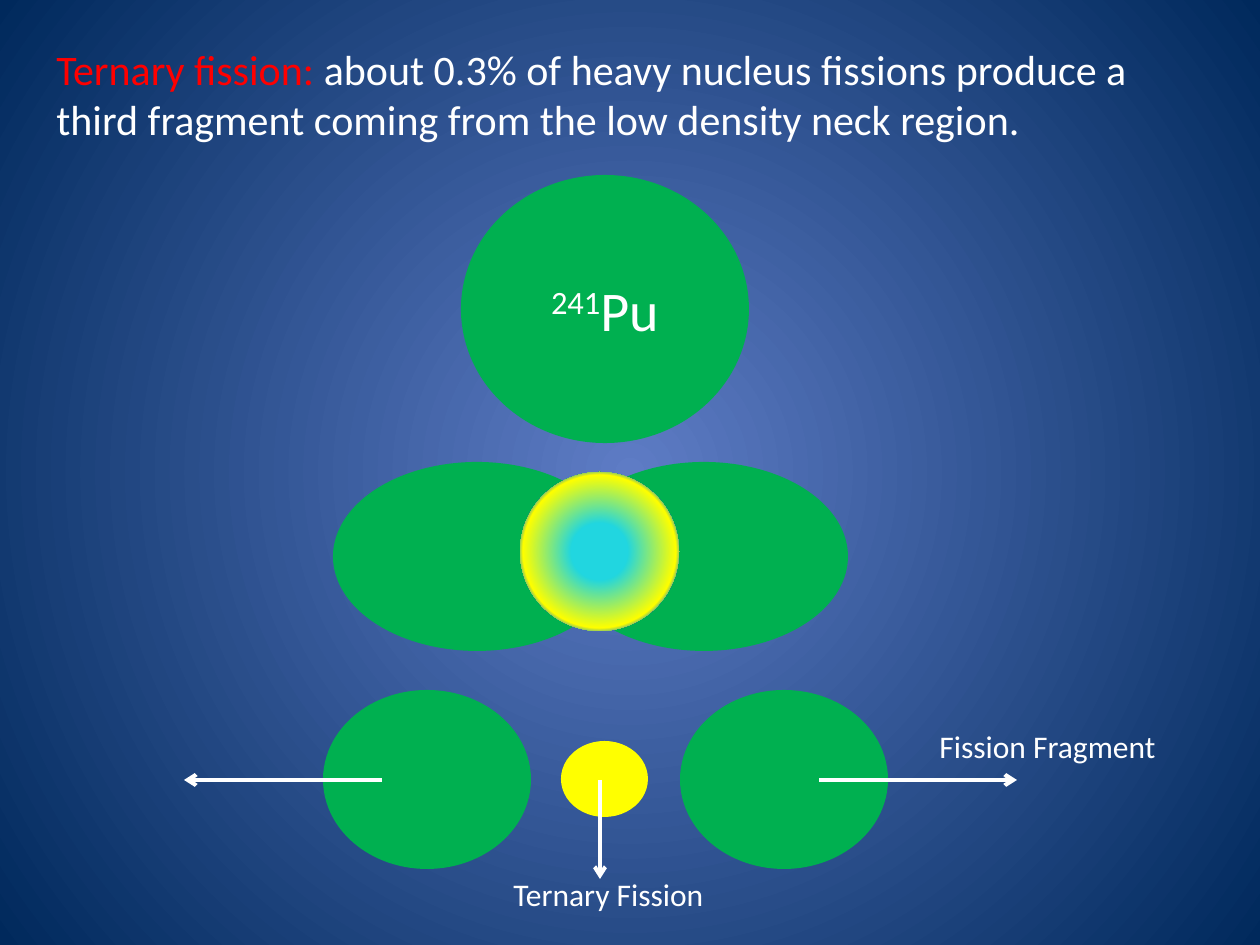
"""Build a slide that explains ternary fission of a heavy nucleus."""
from dataclasses import dataclass
from typing import Any

import lxml.etree
import pptx
import pptx.dml.color
import pptx.enum.shapes
import pptx.enum.text
import pptx.oxml.ns
import pptx.util

SCALE = 914400 / 126
qn = pptx.oxml.ns.qn
Stops = tuple[tuple[int, str], ...]


@dataclass(frozen=True)
class Theme:
    font: str = "Calibri"
    white: str = "FFFFFF"
    accent: str = "FF0000"
    nucleus: str = "00B050"
    ternary: str = "FFFF00"
    background: Stops = ((0, "5E7CC5"), (100, "00295C"))
    neck: Stops = ((25, "21D6E0"), (68, "FFFF00"), (75, "0087E6"), (100, "005CBF"))
    title_size: int = 24
    nucleus_size: int = 32
    label_size: int = 18
    arrow_width: float = 2.25


THEME = Theme()


@dataclass(frozen=True)
class Span:
    text: str
    size: int
    color: str = THEME.white
    raised: bool = False


@dataclass(frozen=True)
class Ellipse:
    left: int
    top: int
    width: int
    height: int
    fill: str | Stops = THEME.nucleus
    spans: tuple[Span, ...] = ()


@dataclass(frozen=True)
class Arrow:
    x: int
    y: int
    dx: int
    dy: int


@dataclass(frozen=True)
class Label:
    left: int
    top: int
    width: int
    height: int
    spans: tuple[Span, ...]
    wrap: bool = False


def px(*lengths: int) -> list[pptx.util.Emu]:
    return [pptx.util.Emu(round(length * SCALE)) for length in lengths]


def rgb(color: str) -> pptx.dml.color.RGBColor:
    return pptx.dml.color.RGBColor.from_string(color)


def apply(target: Any, values: dict[str, Any]) -> None:
    for name, value in values.items():
        setattr(target, name, value)


def fill_radial(owner: Any, fill: Any, stops: Stops) -> None:
    fill.solid()
    solid = owner.element.find(f".//{qn('a:solidFill')}")
    gradient = lxml.etree.Element(qn("a:gradFill"), rotWithShape="1")
    stop_list = lxml.etree.SubElement(gradient, qn("a:gsLst"))
    for position, color in stops:
        stop = lxml.etree.SubElement(stop_list, qn("a:gs"), pos=str(position * 1000))
        lxml.etree.SubElement(stop, qn("a:srgbClr"), val=color)
    circle = lxml.etree.SubElement(gradient, qn("a:path"), path="circle")
    center = dict.fromkeys("ltrb", "50000")
    lxml.etree.SubElement(circle, qn("a:fillToRect"), center)
    solid.getparent().replace(solid, gradient)


def write(para: Any, spans: tuple[Span, ...]) -> None:
    for item in spans:
        span = para.add_run()
        span.text = item.text
        apply(span.font, {"name": THEME.font, "size": pptx.util.Pt(item.size)})
        span.font.color.rgb = rgb(item.color)
        if item.raised:
            span._r.get_or_add_rPr().set("baseline", "30000")


def draw_ellipse(page: Any, item: Ellipse) -> None:
    shape = page.shapes.add_shape(
        pptx.enum.shapes.MSO_SHAPE.OVAL,
        *px(item.left, item.top, item.width, item.height),
    )
    shape.shadow.inherit = False
    shape.line.fill.background()
    if isinstance(item.fill, str):
        shape.fill.solid()
        shape.fill.fore_color.rgb = rgb(item.fill)
    else:
        fill_radial(shape, shape.fill, item.fill)
    shape.text_frame.vertical_anchor = pptx.enum.text.MSO_ANCHOR.MIDDLE
    para = shape.text_frame.paragraphs[0]
    para.alignment = pptx.enum.text.PP_ALIGN.CENTER
    write(para, item.spans)


def draw_arrow(page: Any, item: Arrow) -> None:
    arrow = page.shapes.add_connector(
        pptx.enum.shapes.MSO_CONNECTOR.STRAIGHT,
        *px(item.x, item.y, item.x + item.dx, item.y + item.dy),
    )
    arrow.line.width = pptx.util.Pt(THEME.arrow_width)
    arrow.line.color.rgb = rgb(THEME.white)
    outline = arrow.line._get_or_add_ln()
    lxml.etree.SubElement(outline, qn("a:tailEnd"), type="arrow")
    lxml.etree.SubElement(outline.getparent(), qn("a:effectLst"))


def draw_label(page: Any, item: Label) -> None:
    box = page.shapes.add_textbox(*px(item.left, item.top, item.width, item.height))
    apply(box.text_frame, {
        "word_wrap": item.wrap,
        "auto_size": pptx.enum.text.MSO_AUTO_SIZE.SHAPE_TO_FIT_TEXT,
    })
    write(box.text_frame.paragraphs[0], item.spans)


TITLE = Label(44, 37, 1171, 115, (
    Span("Ternary fission: ", THEME.title_size, THEME.accent),
    Span("about 0.3% of heavy nucleus fissions produce a third fragment "
         "coming from the low density neck region.", THEME.title_size),
), wrap=True)
PARENT = Ellipse(461, 175, 288, 268, spans=(
    Span("241", THEME.nucleus_size, raised=True),
    Span("Pu", THEME.nucleus_size),
))
LOBES = [Ellipse(left, 462, 288, 189) for left in (333, 560)]
TERNARY = Ellipse(561, 741, 87, 76, THEME.ternary)
FRAGMENTS = [Ellipse(left, 690, 208, 179) for left in (323, 680)]
ARROWS = [Arrow(819, 780, 198, 0), Arrow(382, 780, -198, 0), Arrow(600, 780, 0, 99)]
NECK = Ellipse(520, 472, 159, 159, THEME.neck)
LABELS = [
    Label(927, 721, 244, 50, (Span("Fission Fragment", THEME.label_size),)),
    Label(501, 869, 218, 50, (Span("Ternary Fission", THEME.label_size),)),
]


def main() -> None:
    deck = pptx.Presentation()
    width, height = px(1260, 945)
    apply(deck, {"slide_width": width, "slide_height": height})
    page = deck.slides.add_slide(deck.slide_layouts[6])
    fill_radial(page, page.background.fill, THEME.background)
    draw_label(page, TITLE)
    for ellipse in (PARENT, *LOBES, TERNARY, *FRAGMENTS):
        draw_ellipse(page, ellipse)
    for arrow in ARROWS:
        draw_arrow(page, arrow)
    draw_ellipse(page, NECK)
    for label in LABELS:
        draw_label(page, label)
    deck.save("out.pptx")


if __name__ == "__main__":
    main()
